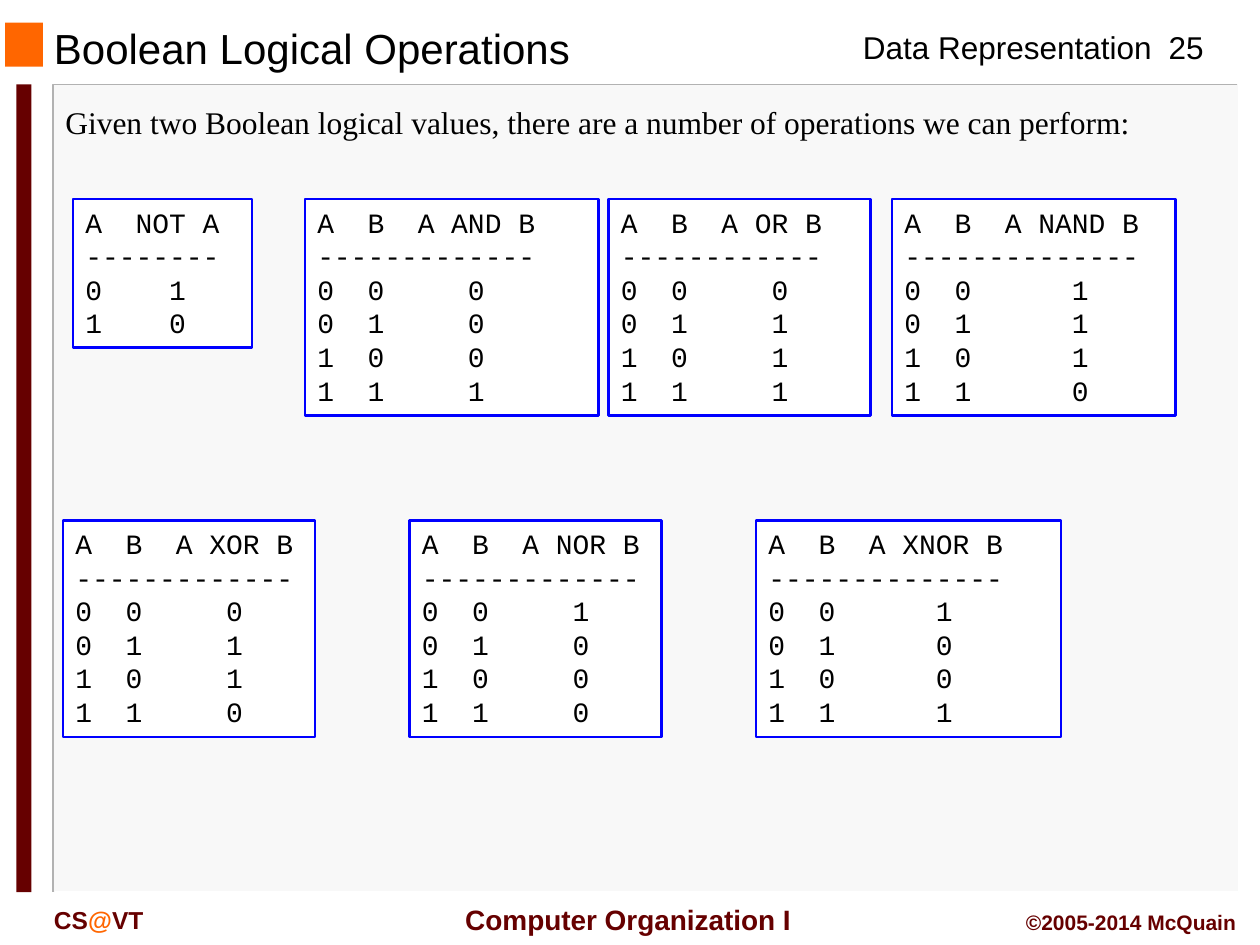
from itertools import product

from pptx import Presentation
from pptx.dml.color import RGBColor
from pptx.enum.shapes import MSO_SHAPE as SHAPE
from pptx.enum.text import MSO_ANCHOR as ANCHOR, MSO_AUTO_SIZE as AUTO, PP_ALIGN as ALIGN
from pptx.util import Inches, Pt

COLORS = {
    "text": "000000", "maroon": "660000", "orange": "FF6600", "panel": "F8F8F8",
    "edge": "B2B2B2", "white": "FFFFFF", "border": "0000FF",
}
GATES = {
    "AND": lambda a, b: a & b,
    "OR": lambda a, b: a | b,
    "NAND": lambda a, b: 1 - (a & b),
    "XOR": lambda a, b: a ^ b,
    "NOR": lambda a, b: 1 - (a | b),
    "XNOR": lambda a, b: 1 - (a ^ b),
}
TABLES = [
    ("NOT", 0.58, 1.58, 1.42), ("AND", 2.42, 1.58, 2.33),
    ("OR", 4.83, 1.58, 2.08), ("NAND", 7.08, 1.58, 2.25),
    ("XOR", 0.5, 4.13, 2), ("NOR", 3.25, 4.13, 2), ("XNOR", 6, 4.13, 2.42),
]


def rgb(name):
    """Return the named colour."""
    return RGBColor.from_string(COLORS[name])


def style_run(r, size, font="Arial", color="text", bold=False):
    """Set the font of one run."""
    r.font.size, r.font.name, r.font.bold = Pt(size), font, bold
    r.font.color.rgb = rgb(color)


def add_rect(s, x, y, w, h, fill, line=None):
    """Add a flat rectangle, outlined when a line colour is given."""
    sp = s.shapes.add_shape(SHAPE.RECTANGLE, Inches(x), Inches(y), Inches(w), Inches(h))
    sp.shadow.inherit = False
    sp.fill.solid()
    sp.fill.fore_color.rgb = rgb(fill)
    if line:
        sp.line.color.rgb = rgb(line)
        sp.line.width = Pt(1.5)
    else:
        sp.line.fill.background()
    return sp


def add_edge(s, points, color):
    """Add an open one-point outline through the points."""
    start, *rest = [(Inches(x), Inches(y)) for x, y in points]
    builder = s.shapes.build_freeform(*start)
    builder.add_line_segments(rest, close=False)
    sp = builder.convert_to_shape()
    sp.shadow.inherit = False
    sp.fill.background()
    sp.line.color.rgb = rgb(color)
    sp.line.width = Pt(1)


def add_text(s, x, y, w, h, text, size, align=ALIGN.LEFT, anchor=ANCHOR.TOP, wrap=True, **font):
    """Add a one-paragraph text box and return its paragraph."""
    tf = s.shapes.add_textbox(Inches(x), Inches(y), Inches(w), Inches(h)).text_frame
    tf.word_wrap, tf.vertical_anchor = wrap, anchor
    tf.text = text
    p = tf.paragraphs[0]
    p.alignment = align
    for r in p.runs:
        style_run(r, size, **font)
    return p


def add_panel(s, x, y, w, h):
    """Add the content panel with its bevelled edges and side bar."""
    add_rect(s, x + 0.01, y, w, h, "panel")
    add_edge(s, [(x + w, y), (x, y), (x, y + h)], "edge")
    add_edge(s, [(x + w + 0.01, y), (x + w + 0.01, y + h), (x + 0.02, y + h)], "white")
    add_rect(s, x - 0.29, y, 0.12, h, "maroon")


def add_header(s, x, y):
    """Add the marker, title, chapter name and page number."""
    add_rect(s, x, y, 0.3, 0.35, "orange")
    add_text(s, x + 6.71, y - 0.01, 2.52, 0.4, "Data Representation", 18, wrap=False)
    add_text(s, x + 9.04, y - 0.01, 0.67, 0.4, "25", 18, ALIGN.CENTER)
    add_text(s, x + 0.29, y + 0.01, 6.33, 0.38, "Boolean Logical Operations", 24,
             anchor=ANCHOR.MIDDLE)


def add_footer(s, x, y):
    """Add the department, course and copyright line."""
    p = add_text(s, x, y + 0.02, 1.5, 0.33, "", 14)
    for text, color in [("CS", "maroon"), ("@", "orange"), ("VT", "maroon")]:
        r = p.add_run()
        r.text = text
        style_run(r, 14, color=color, bold=True)
    add_text(s, x + 3.17, y, 2.91, 0.37, " Computer Organization I", 16, ALIGN.CENTER,
             ANCHOR.MIDDLE, False, color="maroon", bold=True)
    add_text(s, x + 7.5, y + 0.06, 2.08, 0.3, "©2005-2014 McQuain", 12, ALIGN.RIGHT,
             color="maroon", bold=True)


def truth_table(name):
    """Return the text lines of the truth table of an operation."""
    if name == "NOT":
        header = "A  NOT A"
        rows = [f"{a}{1 - a:>5}" for a in (0, 1)]
    else:
        header = f"A  B  A {name} B"
        width = 7 if len(name) == 4 else 6
        rows = [f"{a}  {b}{GATES[name](a, b):>{width}}" for a, b in product((0, 1), repeat=2)]
    return [header, "-" * len(header), *rows]


def add_truth_table(s, name, x, y, w):
    """Add a framed truth table whose height follows its lines."""
    lines = truth_table(name)
    sp = add_rect(s, x, y, w, 0.1 + 0.27 * len(lines), "white", "border")
    tf = sp.text_frame
    tf.word_wrap, tf.auto_size = True, AUTO.SHAPE_TO_FIT_TEXT
    tf.vertical_anchor = ANCHOR.TOP
    tf.text = "\n".join(lines)
    for p in tf.paragraphs:
        p.alignment = ALIGN.LEFT
        style_run(p.runs[0], 16, "Courier New")


def main():
    """Build the slide and save it."""
    prs = Presentation()
    prs.slide_width, prs.slide_height = Inches(10), Inches(7.5)
    s = prs.slides.add_slide(prs.slide_layouts[6])
    add_panel(s, 0.42, 0.67, 9.4, 6.41)
    add_header(s, 0.04, 0.18)
    add_footer(s, 0.33, 7.11)
    add_text(s, 0.42, 0.77, 9.42, 0.4,
             "Given two Boolean logical values, there are a number of operations we can perform:",
             18, font="Times New Roman")
    for table in TABLES:
        add_truth_table(s, *table)
    prs.save("out.pptx")


if __name__ == "__main__":
    main()
